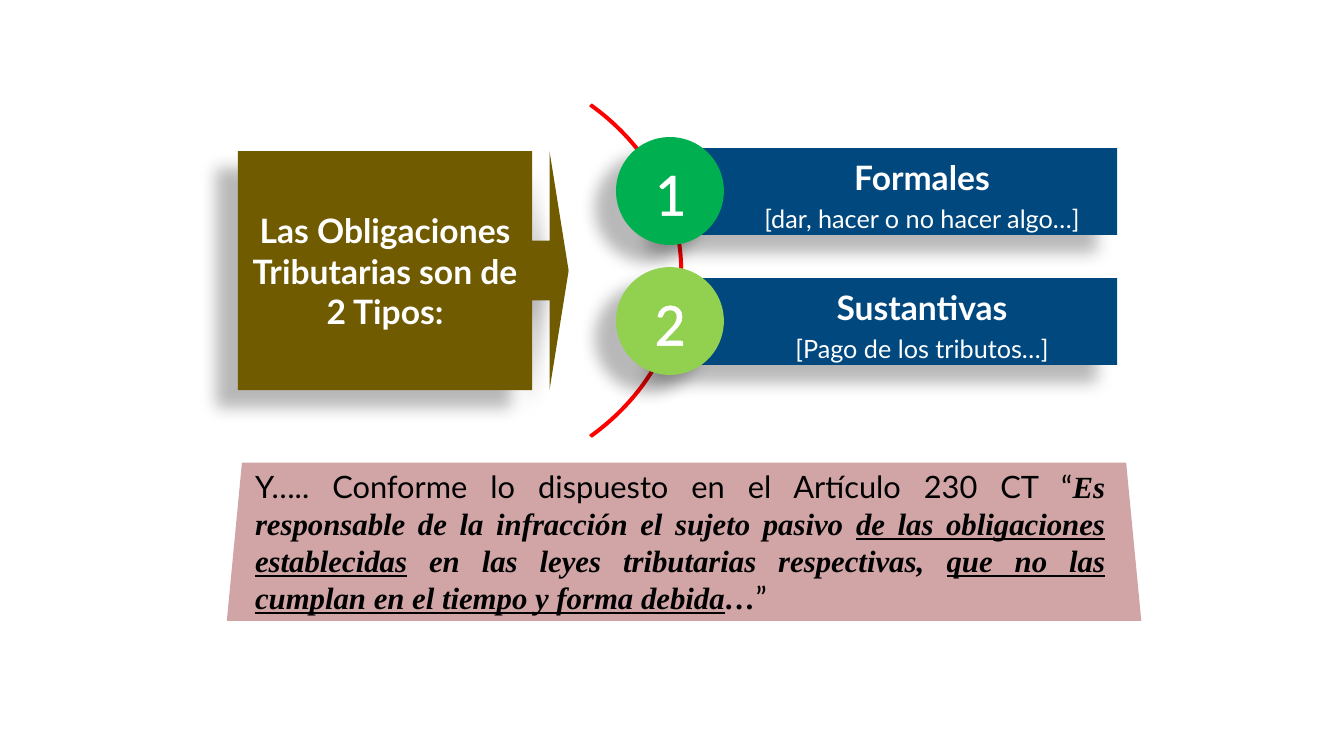
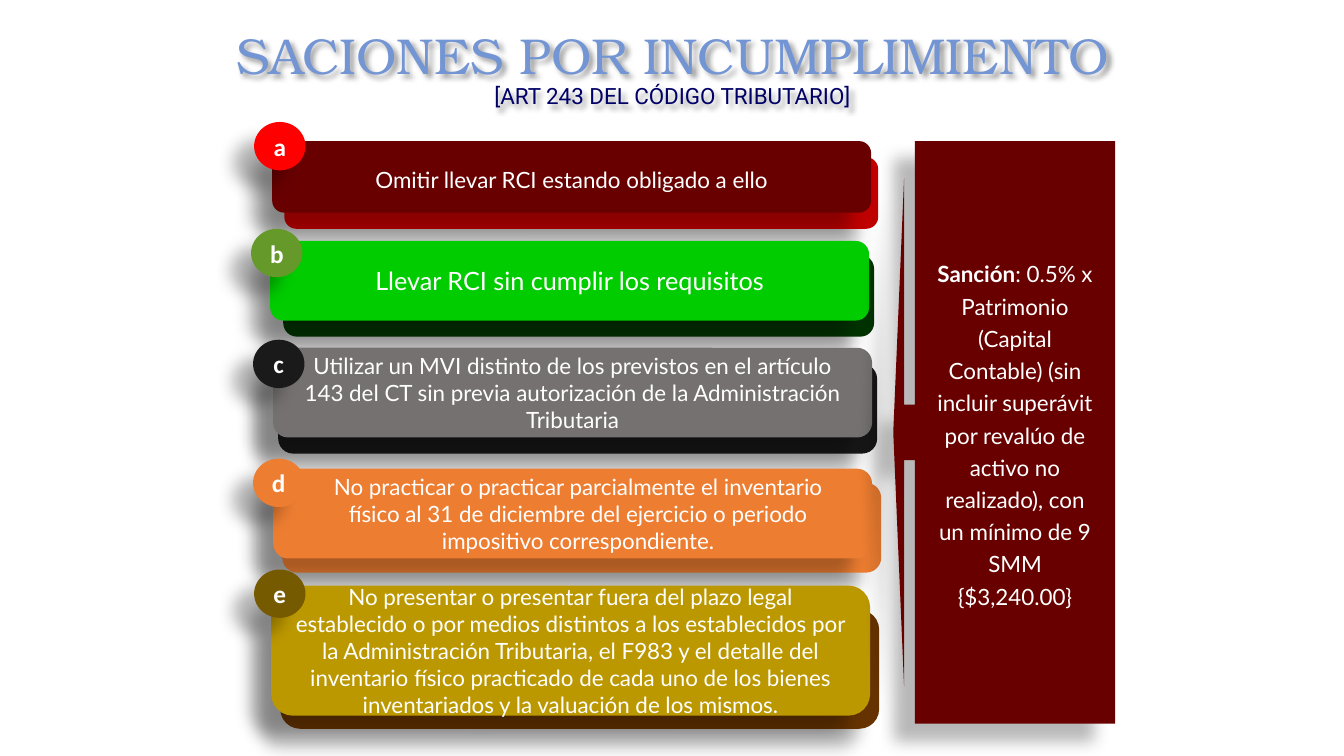
"""Builds two slides on tax obligations and the sanctions for not meeting them."""
from lxml import etree
from pptx import Presentation
from pptx.dml.color import RGBColor
from pptx.enum.shapes import MSO_SHAPE
from pptx.enum.text import MSO_ANCHOR, PP_ALIGN
from pptx.oxml.ns import qn
from pptx.util import Inches, Pt

RECTANGLE, ROUNDED = MSO_SHAPE.RECTANGLE, MSO_SHAPE.ROUNDED_RECTANGLE
OVAL, ARC = MSO_SHAPE.OVAL, MSO_SHAPE.BLOCK_ARC
RIGHT_CALLOUT = MSO_SHAPE.RIGHT_ARROW_CALLOUT
LEFT_CALLOUT = MSO_SHAPE.LEFT_ARROW_CALLOUT
CENTER, JUSTIFY = PP_ALIGN.CENTER, PP_ALIGN.JUSTIFY
MIDDLE = MSO_ANCHOR.MIDDLE

WHITE = RGBColor(0xFF, 0xFF, 0xFF)
BLACK = RGBColor(0x00, 0x00, 0x00)
RED = RGBColor(0xFF, 0x00, 0x00)
DARK_RED = RGBColor(0xC0, 0x00, 0x00)
MAROON = RGBColor(0x68, 0x00, 0x00)
OLIVE = RGBColor(0x70, 0x5B, 0x00)
BLUE = RGBColor(0x00, 0x48, 0x7E)
GREEN = RGBColor(0x00, 0xB0, 0x50)
LIME = RGBColor(0x92, 0xD0, 0x50)
ROSE = RGBColor(0xD1, 0xA5, 0xA6)
SKY = RGBColor(0x73, 0x95, 0xD3)
NAVY = RGBColor(0x00, 0x00, 0x66)
FOREST = RGBColor(0x00, 0x33, 0x00)
BRIGHT_GREEN = RGBColor(0x00, 0xCC, 0x00)
LEAF = RGBColor(0x65, 0x9A, 0x2A)
INK = RGBColor(0x18, 0x17, 0x17)
CHARCOAL = RGBColor(0x1A, 0x1A, 0x1A)
GRAY = RGBColor(0x76, 0x71, 0x71)
ORANGE = RGBColor(0xED, 0x7D, 0x31)
BROWN = RGBColor(0x66, 0x33, 0x00)
GOLD = RGBColor(0xBC, 0x98, 0x00)
BRONZE = RGBColor(0x76, 0x5A, 0x00)

BODY, BADGE, SERIF = "Lato", "Calibri", "Times New Roman"
SOFT_SHADOW = (28, 11.8, 19.7, 141)
TITLE_SHADOW = (40, 4, 3, 45)

HEADING = "Las Obligaciones Tributarias son de 2 Tipos:"
OBLIGATIONS = [
    ("1", GREEN, "Formales", "[dar, hacer o no hacer algo…]"),
    ("2", LIME, "Sustantivas", "[Pago de los tributos…]"),
]
QUOTED = dict(size=22, color=BLACK, font=SERIF, bold=True, italic=True)
UNDERLINED = dict(QUOTED, underline=True)
PLAIN = dict(size=22, color=BLACK)
ARTICLE = [
    ("Y….. Conforme lo dispuesto en el Artículo 230 CT “", PLAIN),
    ("Es responsable de la infracción el sujeto pasivo ", QUOTED),
    ("de las obligaciones establecidas", UNDERLINED),
    (" en las leyes tributarias respectivas, ", QUOTED),
    ("que no las cumplan en el tiempo y forma debida", UNDERLINED),
    ("…", QUOTED),
    ("”", PLAIN),
]
ARTICLE_OUTLINE = [(2.4, 4.59), (11.17, 4.59), (11.32, 6.16), (2.25, 6.16)]

TITLE = "SACIONES POR INCUMPLIMIENTO"
SUBTITLE = "[ART 243 DEL CÓDIGO TRIBUTARIO]"
SANCTION = [
    ("Sanción", dict(size=16, bold=True)),
    (": 0.5% x Patrimonio (Capital Contable) (sin incluir superávit por "
     "revalúo de activo no realizado), con un mínimo de 9 SMM {$3,240.00}",
     dict(size=16)),
]
OFFENCES = [
    dict(letter="a", disc=(2.52, 1.21, RED), back=(2.82, 1.56, 5.89, 0.71, DARK_RED),
         front=(2.7, 1.4, 5.94, 0.71, MAROON), size=16, spacing=1.2,
         text="Omitir llevar RCI estando obligado a ello"),
    dict(letter="b", disc=(2.49, 2.27, LEAF), back=(2.81, 2.53, 5.86, 0.81, FOREST),
         front=(2.68, 2.39, 5.94, 0.79, BRIGHT_GREEN), size=18, spacing=1,
         text="Llevar RCI sin cumplir los requisitos"),
    dict(letter="c", disc=(2.51, 3.37, CHARCOAL), back=(2.76, 3.61, 5.94, 0.89, INK),
         front=(2.71, 3.45, 5.94, 0.89, GRAY), size=16, spacing=1,
         text="Utilizar un MVI distinto de los previstos en el artículo 143 del CT "
              "sin previa autorización de la Administración Tributaria"),
    dict(letter="d", disc=(2.51, 4.55, ORANGE), back=(2.8, 4.79, 5.94, 0.89, ORANGE),
         front=(2.71, 4.65, 5.94, 0.89, ORANGE), size=16, spacing=1, left_inset=0.28,
         text="No practicar o practicar parcialmente el inventario físico al 31 de "
              "diciembre del ejercicio o periodo impositivo correspondiente."),
    dict(letter="e", disc=(2.52, 5.65, BRONZE), back=(2.78, 6.05, 5.94, 1.18, BROWN),
         front=(2.69, 5.81, 5.94, 1.29, GOLD), size=16, spacing=1,
         text="No presentar o presentar fuera del plazo legal establecido o por "
              "medios distintos a los establecidos por la Administración Tributaria, "
              "el F983 y el detalle del inventario físico practicado de cada uno de "
              "los bienes inventariados y la valuación de los mismos."),
]


def add_shadow(shape, alpha, blur, distance, angle):
    shape.shadow.inherit = False
    effects = shape._element.spPr.find(qn("a:effectLst"))
    outer = etree.SubElement(effects, qn("a:outerShdw"), blurRad=str(Pt(blur)),
                             dist=str(Pt(distance)), dir=str(angle * 60000),
                             algn="ctr", rotWithShape="0")
    color = etree.SubElement(outer, qn("a:srgbClr"), val=str(BLACK))
    etree.SubElement(color, qn("a:alpha"), val=str(alpha * 1000))


def paint(shape, color):
    shape.fill.solid()
    shape.fill.fore_color.rgb = color
    shape.line.fill.background()
    shape.shadow.inherit = False


def add_block(slide, preset, box, color, adjustments=(), shadow=True):
    block = slide.shapes.add_shape(preset, *map(Inches, box))
    for index, value in enumerate(adjustments):
        block.adjustments[index] = value
    paint(block, color)
    if shadow:
        add_shadow(block, *SOFT_SHADOW)
    return block


def style_run(run, size, color=WHITE, font=BODY, bold=False, italic=False,
              underline=False, outlined=False):
    run.font.size, run.font.name = Pt(size), font
    run.font.bold, run.font.italic, run.font.underline = bold, italic, underline
    run.font.color.rgb = color
    if outlined:
        outline = etree.Element(qn("a:ln"), w=str(Pt(1.45)))
        fill = etree.SubElement(outline, qn("a:solidFill"))
        etree.SubElement(fill, qn("a:srgbClr"), val=str(color))
        run.font._element.insert(0, outline)


def write(shape, paragraphs, insets=(0.1, 0.05, 0.1, 0.05), align=CENTER,
          spacing=1, wrap=True):
    frame = shape.text_frame
    frame.word_wrap, frame.vertical_anchor = wrap, MIDDLE
    (frame.margin_left, frame.margin_top,
     frame.margin_right, frame.margin_bottom) = map(Inches, insets)
    for index, runs in enumerate(paragraphs):
        paragraph = frame.add_paragraph() if index else frame.paragraphs[0]
        paragraph.alignment, paragraph.line_spacing = align, float(spacing)
        for text, style in runs:
            run = paragraph.add_run()
            run.text = text
            style_run(run, **style)


def add_badge(slide, box, color, label, size, wrap=True, **style):
    badge = add_block(slide, OVAL, box, color)
    write(badge, [[(label, dict(size=size, font=BADGE, **style))]], wrap=wrap)


def build_obligations(slide):
    arc = add_block(slide, ARC, (1.67, 0.52, 5.1, 4.33), RED, (189, 27, 0.006), False)
    arc.line.color.rgb, arc.line.width = RED, Pt(1)
    heading = add_block(slide, RIGHT_CALLOUT, (2.36, 1.5, 3.28, 2.37), OLIVE,
                        (0.25, 0.5, 0.08, 0.89))
    write(heading, [[(HEADING, dict(size=24, bold=True))]])
    for index, (number, color, name, detail) in enumerate(OBLIGATIONS):
        top = 1.47 + 1.29 * index
        card = add_block(slide, RECTANGLE, (6.64, top, 4.44, 0.86), BLUE)
        write(card, [[(name, dict(size=24, bold=True))], [(detail, dict(size=18))]],
              insets=(0.68, 0.11, 0.11, 0.11), spacing=1.2)
        add_badge(slide, (6.11, top - 0.11, 1.07, 1.07), color, number, 44,
                  outlined=True)
    start, *corners = [tuple(map(Inches, point)) for point in ARTICLE_OUTLINE]
    builder = slide.shapes.build_freeform(*start)
    builder.add_line_segments(corners, close=True)
    article = builder.convert_to_shape()
    paint(article, ROSE)
    write(article, [ARTICLE], insets=(0.28, 0.05, 0.36, 0.05), align=JUSTIFY)


def build_sanctions(slide):
    title = slide.shapes.add_textbox(*map(Inches, (1.51, 0.33, 10.32, 0.73)))
    write(title, [[(TITLE, dict(size=36, color=SKY, font="TeX Gyre Bonum"))],
                  [(SUBTITLE, dict(size=16, color=NAVY, font="Roboto"))]],
          insets=(0.04,) * 4, spacing=0.9)
    add_shadow(title, *TITLE_SHADOW)
    for offence in OFFENCES:
        *back_box, back_color = offence["back"]
        add_block(slide, ROUNDED, back_box, back_color)
        *front_box, front_color = offence["front"]
        front = add_block(slide, ROUNDED, front_box, front_color)
        write(front, [[(offence["text"], dict(size=offence["size"]))]],
              insets=(offence.get("left_inset", 0.17), 0.05, 0.17, 0.05),
              spacing=offence["spacing"])
        left, top, disc_color = offence["disc"]
        add_badge(slide, (left, top, 0.51, 0.48), disc_color, offence["letter"], 18,
                  wrap=False, bold=True)
    sanction = add_block(slide, LEFT_CALLOUT, (8.86, 1.4, 2.2, 5.78), MAROON,
                         (0.25, 1.147, 0.049, 0.902))
    write(sanction, [SANCTION], insets=(0.2,) * 4, spacing=1.2)


def main():
    deck = Presentation()
    deck.slide_width, deck.slide_height = Inches(13.33), Inches(7.5)
    for build in (build_obligations, build_sanctions):
        build(deck.slides.add_slide(deck.slide_layouts[6]))
    deck.save("out.pptx")


if __name__ == "__main__":
    main()
